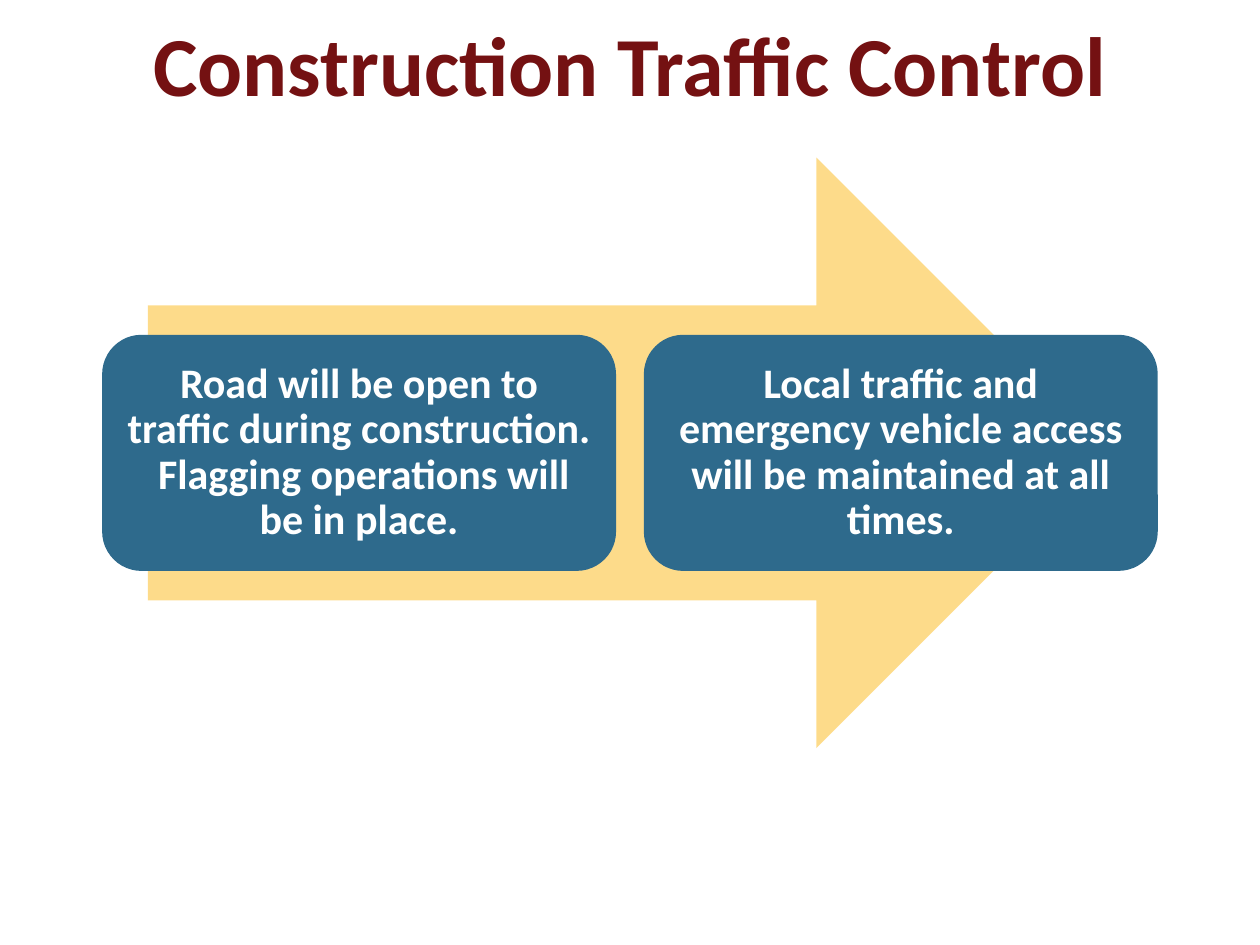
from lxml.etree import SubElement
from pptx import Presentation
from pptx.dml.color import RGBColor
from pptx.enum.shapes import MSO_SHAPE
from pptx.enum.text import MSO_ANCHOR, MSO_AUTO_SIZE, PP_ALIGN
from pptx.oxml.ns import qn
from pptx.util import Cm, Pt

MAROON = RGBColor(0x74, 0x11, 0x12)
GOLD = RGBColor(0xFD, 0xB9, 0x17)
BLUE = RGBColor(0x2E, 0x6A, 0x8C)
WHITE = RGBColor(0xFF, 0xFF, 0xFF)

TITLE_FONT = {"name": "Calibri", "size": Pt(48), "bold": True}
MEASURE_FONT = {"name": "Calibri", "size": Pt(24), "bold": True}
MEASURE_FRAME = {
    "word_wrap": True,
    "vertical_anchor": MSO_ANCHOR.MIDDLE,
    "margin_left": Cm(0.25),
    "margin_right": Cm(0.25),
    "margin_top": Cm(0.25),
    "margin_bottom": Cm(0.25),
}
MEASURES = [
    "Road will be open to traffic during construction.  Flagging operations will be in place.",
    "Local traffic and emergency vehicle access will be maintained at all times.",
]
MEASURE_LEFT, MEASURE_PITCH = 2.06, 10.92


def apply_format(target, values):
    for attribute, value in values.items():
        setattr(target, attribute, value)


def add_plain_shape(preset, left, top, width, height, color):
    """Add a filled shape without line or shadow."""
    shape = slide.shapes.add_shape(preset, Cm(left), Cm(top), Cm(width), Cm(height))
    shape.shadow.inherit = False
    shape.fill.solid()
    shape.fill.fore_color.rgb = color
    shape.line.fill.background()
    return shape


presentation = Presentation()
presentation.slide_width = Cm(25.4)
presentation.slide_height = Cm(19.05)
slide = presentation.slides.add_slide(presentation.slide_layouts[5])

# Title
title = slide.shapes.title
apply_format(title, {"left": Cm(0), "top": Cm(0), "width": Cm(25.4), "height": Cm(2.54)})
title.text_frame.text = "Construction Traffic Control"
apply_format(title.text_frame, {
    "auto_size": MSO_AUTO_SIZE.NONE,
    "vertical_anchor": MSO_ANCHOR.MIDDLE,
})
heading = title.text_frame.paragraphs[0]
heading.alignment = PP_ALIGN.CENTER
apply_format(heading.font, TITLE_FONT)
heading.font.color.rgb = MAROON

# Half-transparent arrow behind the measures
arrow = add_plain_shape(MSO_SHAPE.RIGHT_ARROW, 2.98, 3.18, 19.43, 11.9, GOLD)
arrow_color = next(arrow.fill._xPr.iter(qn("a:srgbClr")))
SubElement(arrow_color, qn("a:alpha"), val="50000")

# Traffic control measures
for index, wording in enumerate(MEASURES):
    measure = add_plain_shape(MSO_SHAPE.ROUNDED_RECTANGLE,
                              MEASURE_LEFT + index * MEASURE_PITCH, 6.75, 10.36, 4.76, BLUE)
    apply_format(measure.text_frame, MEASURE_FRAME)
    measure.text_frame.text = wording
    paragraph = measure.text_frame.paragraphs[0]
    apply_format(paragraph, {"alignment": PP_ALIGN.CENTER, "line_spacing": 0.9})
    apply_format(paragraph.font, MEASURE_FONT)
    paragraph.font.color.rgb = WHITE

presentation.save("out.pptx")
